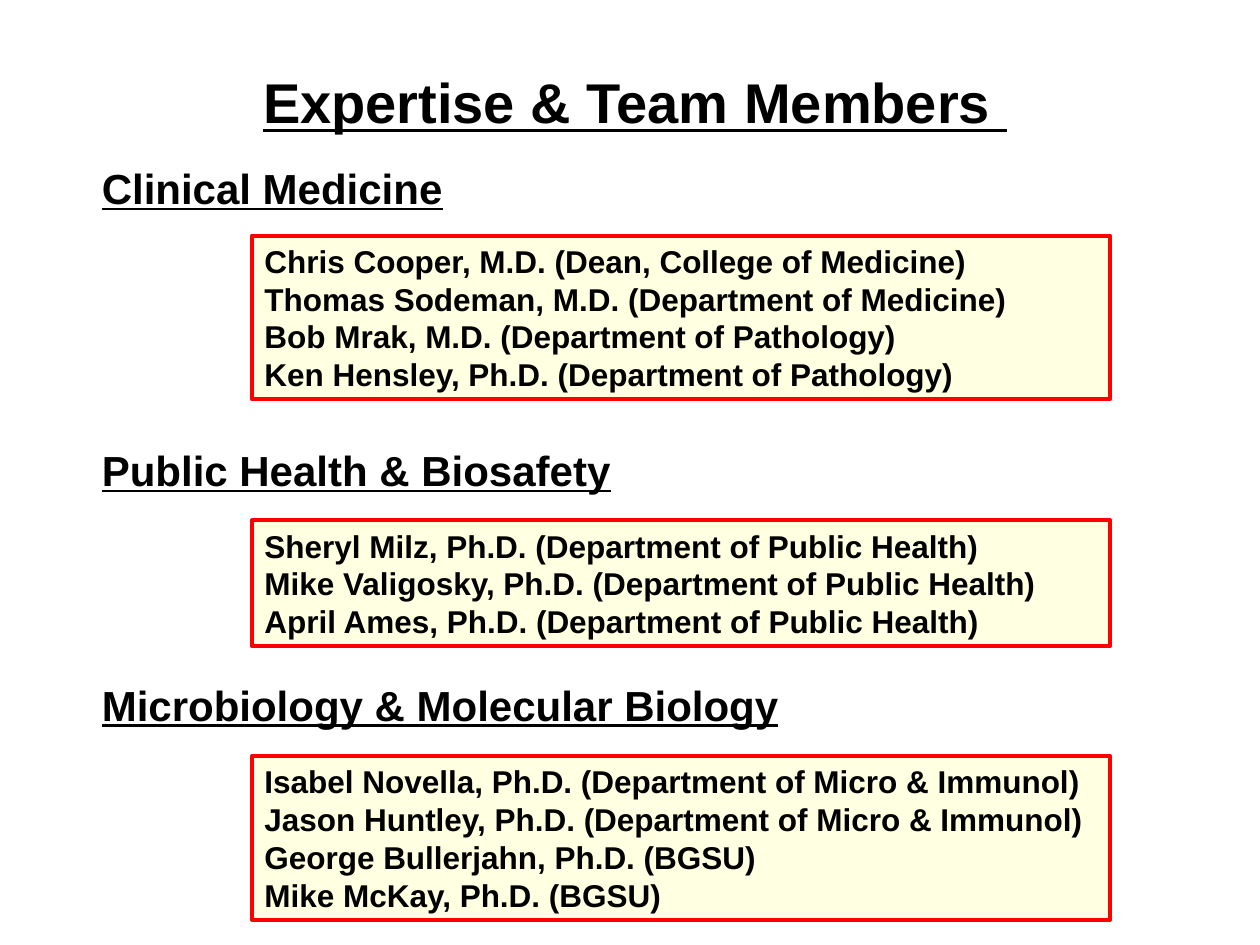
"""Build the team members slide with its three areas of expertise."""
from pptx import Presentation
from pptx import util as u
from pptx.dml.color import RGBColor
from pptx.enum import shapes, text


def rgb(value):
    return RGBColor.from_string(value)


class Deck:
    font = "Arial"
    ink = "000000"
    fill = "FFFFE1"
    border = "FF0000"

    def __init__(self, prs):
        self.s = prs.slides.add_slide(prs.slide_layouts[6])

    def set_text(self, sp, lines, size, align=text.PP_ALIGN.LEFT, underline=None, wrap=True):
        tf = sp.text_frame
        tf.word_wrap = wrap
        tf.auto_size = text.MSO_AUTO_SIZE.SHAPE_TO_FIT_TEXT
        tf.vertical_anchor = text.MSO_ANCHOR.TOP
        tf.text = "\n".join(lines)
        for p in tf.paragraphs:
            p.alignment = align
            p.font.name = self.font
            p.font.size = u.Pt(size)
            p.font.bold = True
            p.font.underline = underline
            p.font.color.rgb = rgb(self.ink)

    def title(self, line):
        sp = self.s.shapes.add_textbox(u.Inches(0.5), u.Inches(0.49), u.Inches(9.08), u.Inches(0.64))
        self.set_text(sp, [line], 32, text.PP_ALIGN.CENTER, underline=True)

    def heading(self, line, top, width):
        sp = self.s.shapes.add_textbox(u.Inches(0.71), u.Inches(top), u.Inches(width), u.Inches(0.5))
        self.set_text(sp, [line], 24, underline=True, wrap=False)

    def members(self, lines, top):
        height = 0.1 + 0.3 * len(lines)
        sp = self.s.shapes.add_shape(
            shapes.MSO_SHAPE.RECTANGLE, u.Inches(2), u.Inches(top), u.Inches(6.81), u.Inches(height))
        sp.shadow.inherit = False
        sp.fill.solid()
        sp.fill.fore_color.rgb = rgb(self.fill)
        sp.line.color.rgb = rgb(self.border)
        sp.line.width = u.Pt(2.25)
        self.set_text(sp, lines, 18)


TEAMS = [
    ("Clinical Medicine", 1.24, 3.03, 1.87, [
        "Chris Cooper, M.D. (Dean, College of Medicine)",
        "Thomas Sodeman, M.D. (Department of Medicine)",
        "Bob Mrak, M.D. (Department of Pathology)",
        "Ken Hensley, Ph.D. (Department of Pathology)",
    ]),
    ("Public Health & Biosafety", 3.48, 4.28, 4.13, [
        "Sheryl Milz, Ph.D. (Department of Public Health)",
        "Mike Valigosky, Ph.D. (Department of Public Health)",
        "April Ames, Ph.D. (Department of Public Health)",
    ]),
    ("Microbiology & Molecular Biology", 5.34, 5.83, 6, [
        "Isabel Novella, Ph.D. (Department of Micro & Immunol)",
        "Jason Huntley, Ph.D. (Department of Micro & Immunol)",
        "George Bullerjahn, Ph.D. (BGSU)",
        "Mike McKay, Ph.D. (BGSU)",
    ]),
]


def main():
    prs = Presentation()
    prs.slide_width, prs.slide_height = u.Inches(10), u.Inches(7.5)
    deck = Deck(prs)
    deck.title("Expertise & Team Members ")
    for area, heading_top, heading_width, members_top, members in TEAMS:
        deck.heading(area, heading_top, heading_width)
        deck.members(members, members_top)
    prs.save("out.pptx")


if __name__ == "__main__":
    main()
